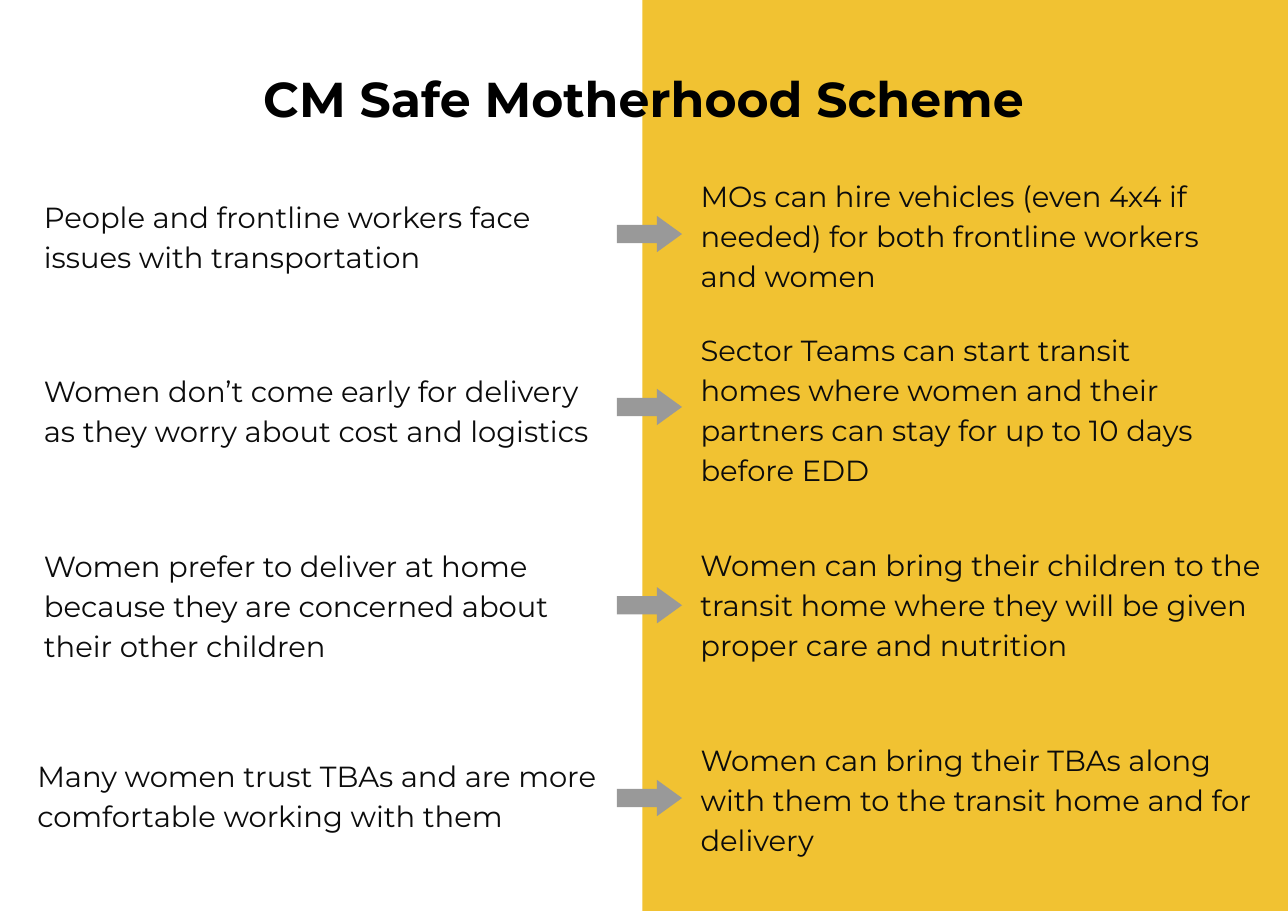
from dataclasses import dataclass

from pptx import Presentation
from pptx.dml.color import RGBColor
from pptx.enum import shapes, text
from pptx.util import Inches, Pt

# Content: (problem, its box), (solution, its box), arrow top
# Each box is left, top, width, height in inches
TITLE = "CM Safe Motherhood Scheme"
ROWS = [
    (("People and frontline workers face issues with transportation",
      (0.3, 1.68, 5.01, 0.89)),
     ("MOs can hire vehicles (even 4x4 if needed) for both frontline workers and women",
      (6.26, 1.64, 5.01, 0.96)),
     1.96),
    (("Women don’t come early for delivery as they worry about cost and logistics",
      (0.3, 3.08, 5.28, 1.26)),
     ("Sector Teams can start transit homes where women and their partners "
      "can stay for up to 10 days before EDD",
      (6.26, 2.58, 5.01, 2.23)),
     3.53),
    (("Women prefer to deliver at home because they are concerned about their other children",
      (0.3, 4.85, 5.15, 1.26)),
     ("Women can bring their children to the transit home where they will be given "
      "proper care and nutrition",
      (6.26, 4.84, 5.4, 1.26)),
     5.33),
    (("Many women trust TBAs and are more comfortable working with them",
      (0.24, 6.76, 5.4, 0.89)),
     ("Women can bring their TBAs along with them to the transit home and for delivery",
      (6.26, 6.61, 5.28, 1.26)),
     7.08),
]


@dataclass(frozen=True)
class Theme:
    font: str = "Montserrat"
    panel: str = "F1C232"
    arrow: str = "999999"
    title: str = "000000"
    body: str = "0C0C0C"
    title_size: int = 32
    body_size: int = 19


THEME = Theme()
WIDTH, HEIGHT = 11.69, 8.27
PANEL_LEFT = 5.83
ARROW_LEFT, ARROW_WIDTH, ARROW_HEIGHT = 5.6, 0.59, 0.33


def add_block(slide, kind, box, color):
    shape = slide.shapes.add_shape(kind, *map(Inches, box))
    shape.shadow.inherit = False
    shape.fill.solid()
    shape.fill.fore_color.rgb = RGBColor.from_string(color)
    shape.line.fill.background()
    return shape


def add_text(slide, content, box, size, color, inset, spacing):
    shape = slide.shapes.add_textbox(*map(Inches, box))
    frame = shape.text_frame
    frame.word_wrap = True
    frame.margin_left = frame.margin_right = Inches(inset)
    frame.margin_top = frame.margin_bottom = Inches(inset)
    paragraph = frame.paragraphs[0]
    paragraph.text = content
    paragraph.line_spacing = spacing
    paragraph.font.name = THEME.font
    paragraph.font.size = Pt(size)
    paragraph.font.color.rgb = RGBColor.from_string(color)
    return frame, paragraph


def add_statement(slide, content, box):
    frame, paragraph = add_text(slide, content, box, THEME.body_size, THEME.body, 0.1, 1.15)
    frame.vertical_anchor = text.MSO_ANCHOR.MIDDLE
    paragraph.space_after = Pt(40)
    # A box too short for its lines keeps its size
    if box[3] != 0.96:
        frame.auto_size = text.MSO_AUTO_SIZE.SHAPE_TO_FIT_TEXT


def main():
    presentation = Presentation()
    presentation.slide_width = Inches(WIDTH)
    presentation.slide_height = Inches(HEIGHT)
    slide = presentation.slides.add_slide(presentation.slide_layouts[6])

    # Right-hand panel
    add_block(slide, shapes.MSO_SHAPE.RECTANGLE,
              (PANEL_LEFT, 0, WIDTH - PANEL_LEFT, HEIGHT), THEME.panel)

    # Title across both halves
    frame, paragraph = add_text(slide, TITLE, (0.88, 0.41, 9.93, 0.63),
                                THEME.title_size, THEME.title, 0.05, 1.3)
    frame.auto_size = text.MSO_AUTO_SIZE.SHAPE_TO_FIT_TEXT
    paragraph.alignment = text.PP_ALIGN.CENTER
    paragraph.font.bold = True

    # Problem, arrow, solution
    for problem, solution, arrow_top in ROWS:
        add_statement(slide, *problem)
        arrow = add_block(slide, shapes.MSO_SHAPE.RIGHT_ARROW,
                          (ARROW_LEFT, arrow_top, ARROW_WIDTH, ARROW_HEIGHT), THEME.arrow)
        arrow.adjustments[1] = 0.69
        add_statement(slide, *solution)

    presentation.save("out.pptx")


if __name__ == "__main__":
    main()
